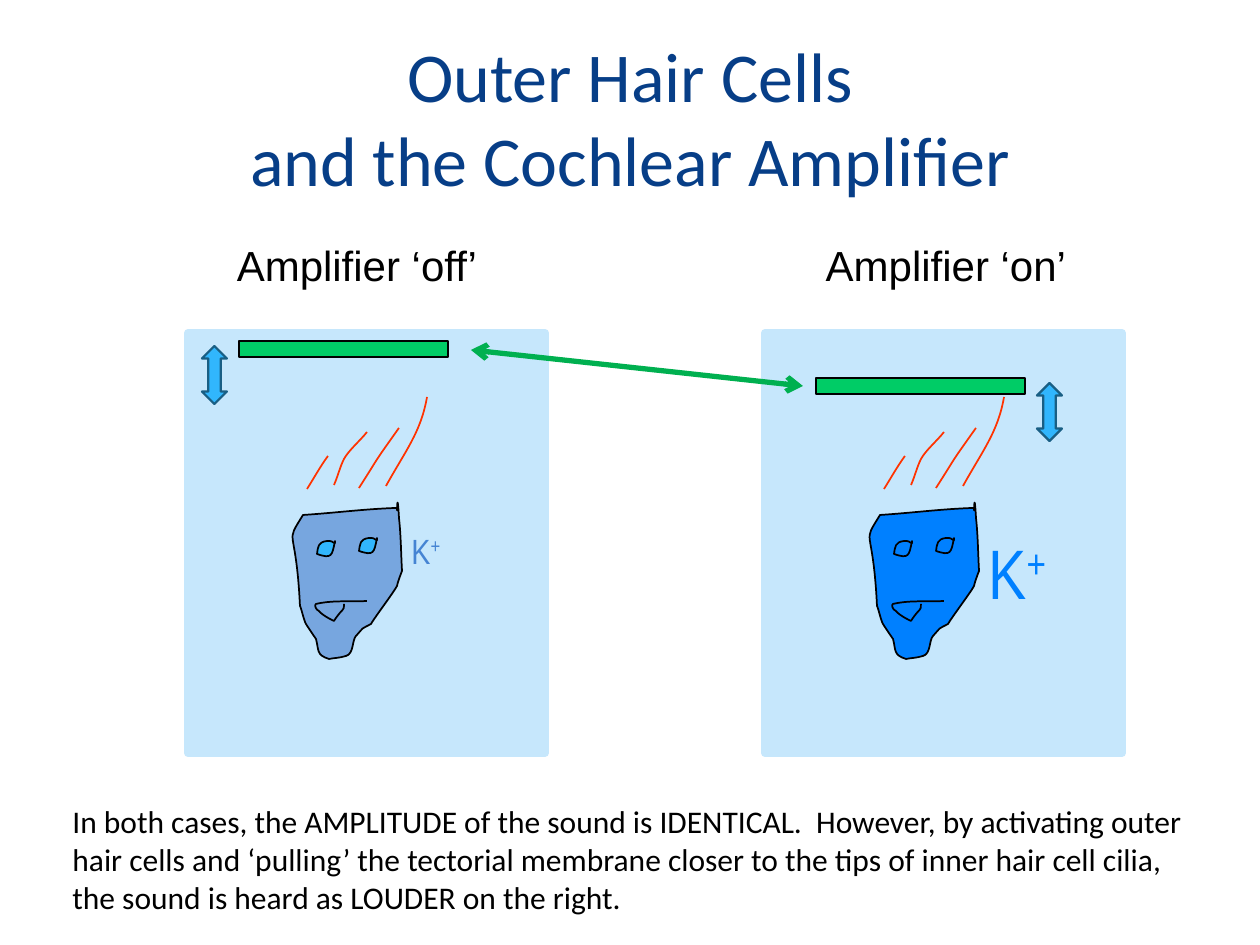
from lxml.etree import SubElement
from pptx import Presentation
from pptx.dml.color import RGBColor
from pptx.enum.shapes import MSO_CONNECTOR, MSO_SHAPE
from pptx.enum.text import MSO_AUTO_SIZE, PP_ALIGN
from pptx.oxml.ns import qn
from pptx.util import Pt

SCALE = 914400 / 126
STEP = 577  # from the left panel to the right one

BLACK = RGBColor(0x00, 0x00, 0x00)
NAVY = RGBColor(0x07, 0x3E, 0x87)
PALE = RGBColor(0xC6, 0xE7, 0xFC)
SKY = RGBColor(0x31, 0xB6, 0xFD)
TEAL = RGBColor(0x19, 0x5F, 0x84)
DULL = RGBColor(0x77, 0xA6, 0xDF)
STEEL = RGBColor(0x45, 0x84, 0xD3)
VIVID = RGBColor(0x00, 0x80, 0xFF)
RED = RGBColor(0xFF, 0x33, 0x00)
MINT = RGBColor(0x00, 0xCC, 0x66)
GREEN = RGBColor(0x00, 0xB0, 0x50)

# Each outline is a start point, then three points per curve.
HAIRS = [
    [(427, 397), (421, 432), (406, 450), (386, 486)],
    [(399, 428), (370, 469), (384, 449), (359, 488)],
    [(367, 432), (360, 441), (349, 450), (344, 459),
     (340, 467), (338, 476), (334, 485)],
    [(328, 456), (320, 467), (314, 478), (307, 489)],
]
CELL = [
    (397, 508), (364, 509), (335, 513), (303, 515),
    (284, 546), (296, 522), (300, 606),
    (301, 607), (304, 621), (306, 624),
    (309, 629), (316, 639), (316, 639),
    (319, 650), (316, 655), (329, 659),
    (334, 658), (340, 658), (346, 656),
    (354, 654), (352, 640), (356, 636),
    (365, 626), (360, 630), (371, 624),
    (375, 617), (394, 592), (397, 586),
    (398, 581), (402, 571), (402, 571),
    (401, 553), (401, 536), (399, 518),
    (397, 483), (397, 520), (397, 508),
]
EYE = [
    (377, 538), (374, 553), (374, 556), (359, 551),
    (360, 544), (360, 539), (369, 538),
    (377, 537), (377, 544), (377, 538),
]
MOUTH = [
    (367, 601), (349, 602), (333, 600), (316, 604),
    (314, 605), (316, 610), (319, 611),
    (323, 616), (334, 621), (334, 621),
    (344, 606), (344, 612), (344, 604),
]


def px(num):
    return round(num * SCALE)


def paint(shape, fill, line, width):
    shape.shadow.inherit = False
    if fill is None:
        shape.fill.background()
    else:
        shape.fill.solid()
        shape.fill.fore_color.rgb = fill
    shape.line.color.rgb = line
    shape.line.width = Pt(width)


def add_box(slide, kind, box, fill, line, width):
    shape = slide.shapes.add_shape(kind, *map(px, box))
    paint(shape, fill, line, width)


def add_curve(slide, points, shift, fill, line, close=False):
    """Draw a freeform whose points are cubic Bezier controls."""
    dx, dy = shift
    spots = [(px(x + dx), px(y + dy)) for x, y in points]
    maker = slide.shapes.build_freeform(*spots[0])
    maker.add_line_segments(spots[1:], close=close)
    shape = maker.convert_to_shape()
    legs = list(shape._element.iter(qn("a:lnTo")))
    for first, second, third in zip(legs[::3], legs[1::3], legs[2::3]):
        first.tag = qn("a:cubicBezTo")
        for leg in (second, third):
            first.append(leg[0])
            leg.getparent().remove(leg)
    paint(shape, fill, line, 1)


def add_text(slide, box, lines, font, size, color, align=PP_ALIGN.LEFT, wrap=True):
    """Add a text box; each line is a list of runs, raised after the first."""
    frame = slide.shapes.add_textbox(*map(px, box)).text_frame
    frame.word_wrap = wrap
    frame.auto_size = MSO_AUTO_SIZE.SHAPE_TO_FIT_TEXT
    for num, runs in enumerate(lines):
        para = frame.add_paragraph() if num else frame.paragraphs[0]
        para.alignment = align
        para.font.name = font
        para.font.size = Pt(size)
        para.font.color.rgb = color
        for spot, text in enumerate(runs):
            run = para.add_run()
            run.text = text
            if spot:
                run.font._element.set("baseline", "30000")


def add_arrow(slide, start, end, color, width):
    """Add a line with an open head at both ends."""
    line = slide.shapes.add_connector(
        MSO_CONNECTOR.STRAIGHT, *map(px, start + end))
    line.line.color.rgb = color
    line.line.width = Pt(width)
    edge = line.line._get_or_add_ln()
    for tag in ("a:headEnd", "a:tailEnd"):
        SubElement(edge, qn(tag), type="arrow")
    SubElement(line._element.spPr, qn("a:effectLst"))


def add_panel(slide, dx, drop, body, eye, mouth, ion, size, swing):
    """Draw one hair cell, with its membrane lowered by drop."""
    add_box(slide, MSO_SHAPE.RECTANGLE, (188 + dx, 333, 357, 420), PALE, PALE, 4.5)
    for hair in HAIRS:
        add_curve(slide, hair, (dx, 0), PALE, RED)
    add_curve(slide, CELL, (dx, 0), body, BLACK, True)
    for shift in ((dx, 0), (dx - 42, 3)):
        add_curve(slide, EYE, shift, eye, BLACK, True)
    add_curve(slide, MOUTH, (dx, 0), mouth, BLACK)
    add_text(slide, (399 + dx, 523, 208, 2.7 * size), [["K", "+"]],
             "Arial Narrow", size, ion)
    add_box(slide, MSO_SHAPE.RECTANGLE, (239 + dx, 341 + drop, 209, 16),
            MINT, BLACK, 0.75)
    add_box(slide, MSO_SHAPE.UP_DOWN_ARROW, (swing, 346 + drop, 25, 58),
            SKY, TEAL, 1.25)


def main():
    deck = Presentation()
    deck.slide_width, deck.slide_height = px(1260), px(945)
    slide = deck.slides.add_slide(deck.slide_layouts[6])

    add_text(slide, (233, 26, 794, 180),
             [["Outer Hair Cells"], ["and the Cochlear Amplifier"]],
             "Calibri", 40, NAVY, PP_ALIGN.CENTER, False)
    add_panel(slide, 0, 0, DULL, SKY, None, STEEL, 20, 202)
    add_panel(slide, STEP, 37, VIVID, VIVID, VIVID, VIVID, 40, 1037)
    for left, state in ((224, "off"), (813, "on")):
        add_text(slide, (left, 233, 266, 63), [[f"Amplifier ‘{state}’"]],
                 "Arial", 24, BLACK, PP_ALIGN.CENTER, False)
    add_arrow(slide, (471, 350), (803, 386), GREEN, 3)
    add_text(slide, (60, 796, 1153, 127), [[
        "In both cases, the AMPLITUDE of the sound is IDENTICAL.  However, "
        "by activating outer hair cells and ‘pulling’ the tectorial membrane "
        "closer to the tips of inner hair cell cilia, the sound is heard as "
        "LOUDER on the right."]], "Calibri", 18, BLACK)
    deck.save("out.pptx")


if __name__ == "__main__":
    main()
